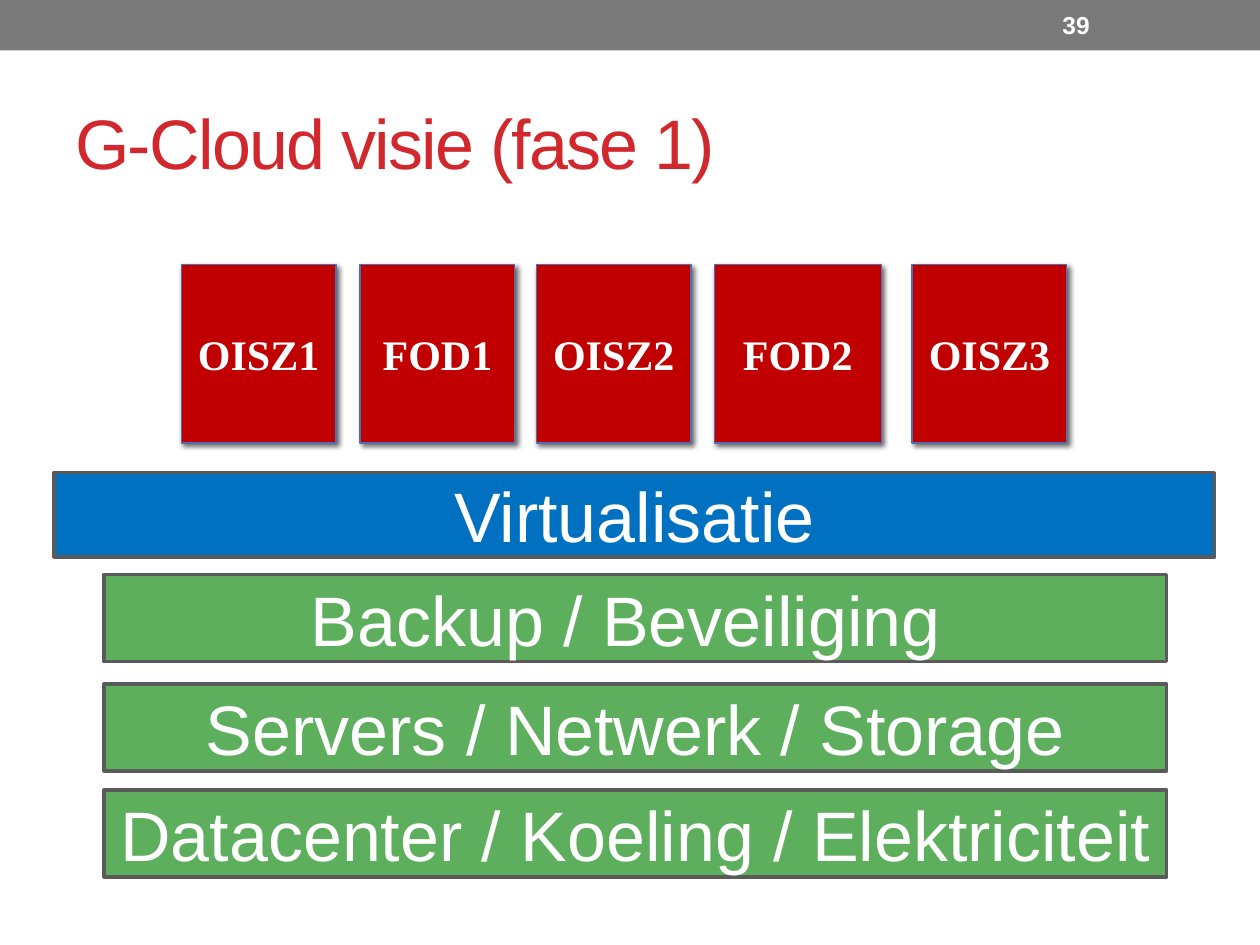
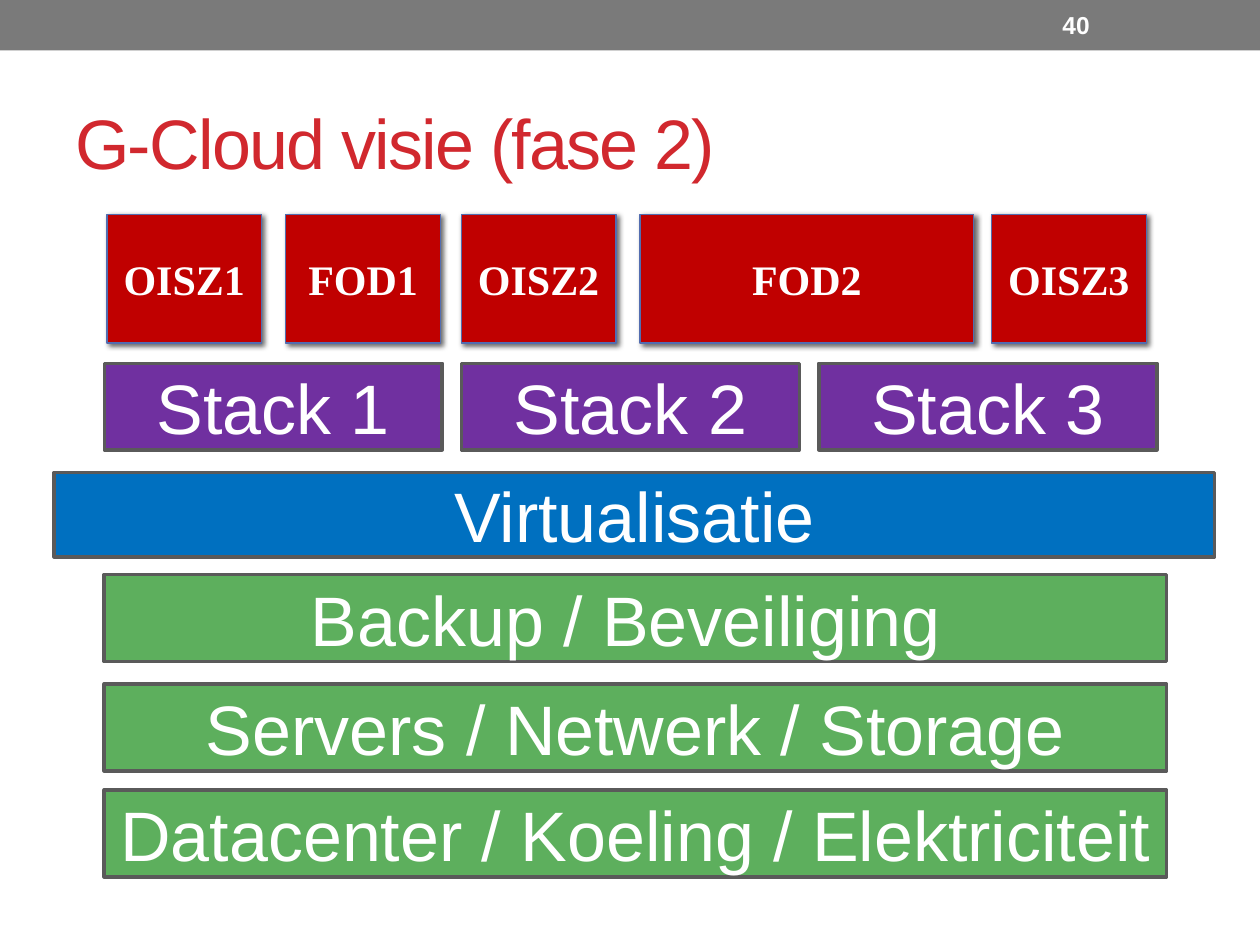
from lxml import etree
from pptx import Presentation
from pptx import util as u
from pptx.dml import color
from pptx.enum import shapes, text
from pptx.oxml import ns

GREY, RED_TITLE, WHITE = "7A7A7A", "D1282E", "FFFFFF"
GREEN, BLUE, PURPLE, EDGE = "5DAF5D", "0070C0", "7030A0", "5A5A5A"
RED, TENANT_EDGE = "C00000", "526DB0"
TENANT_NAMES = ("OISZ1", "FOD1", "OISZ2", "FOD2", "OISZ3")


def rgb(value):
    return color.RGBColor.from_string(value)


def write(box, words, size, tint=WHITE, font="Arial", bold=False, align=None):
    """Fill a box with one vertically centred line of text."""
    frame = box.text_frame
    frame.word_wrap = True
    frame.vertical_anchor = text.MSO_ANCHOR.MIDDLE
    para = frame.paragraphs[0]
    para.alignment = align
    span = para.add_run()
    span.text = words
    span.font.size = u.Pt(size)
    span.font.name = font
    span.font.bold = bold
    span.font.color.rgb = rgb(tint)
    return span


def add_text(page, bounds, words, size, **style):
    box = page.shapes.add_textbox(*map(u.Pt, bounds))
    return write(box, words, size, **style)


def add_block(page, bounds, fill, edge=None, weight=2.08):
    block = page.shapes.add_shape(shapes.MSO_SHAPE.RECTANGLE, *map(u.Pt, bounds))
    block.shadow.inherit = False
    block.fill.solid()
    block.fill.fore_color.rgb = rgb(fill)
    if edge:
        block.line.color.rgb = rgb(edge)
        block.line.width = u.Pt(weight)
    else:
        block.line.fill.background()
    return block


def add_layer(page, bounds, words, fill):
    layer = add_block(page, bounds, fill, EDGE)
    write(layer, words, 40, align=text.PP_ALIGN.CENTER)


def cast_shadow(block):
    """Drop a soft black shadow to the lower right."""
    effects = block.element.spPr.find(ns.qn("a:effectLst"))
    shadow = etree.SubElement(
        effects, ns.qn("a:outerShdw"), blurRad=str(u.Pt(3)), dist=str(u.Pt(2)),
        dir=str(45 * 60000), algn="tl", rotWithShape="0")
    tint = etree.SubElement(shadow, ns.qn("a:srgbClr"), val="000000")
    etree.SubElement(tint, ns.qn("a:alpha"), val="60000")


def draw_frame(page, width, title, number):
    # Top band with the page number
    add_block(page, (0, 0, width, 28.8), GREY)
    add_text(page, (width - 120, 1.4, 84, 26), number, 14, bold=True)
    # Title
    span = add_text(page, (36, 41.8, width - 72, 77.8), title, 40, tint=RED_TITLE)
    span.font._element.set("spc", "-100")


def draw_platform(page, bounds):
    """Virtualisation bar across the box, infrastructure layers below it."""
    left, top, width, height = bounds
    add_layer(page, (left, top, width, 48.2), "Virtualisatie", BLUE)
    inset, layer_height = 28.6, 49.7
    layers = (("Backup / Beveiliging ", 58.3),
              ("Servers / Netwerk / Storage", 120.8),
              ("Datacenter / Koeling / Elektriciteit", height - layer_height))
    for words, drop in layers:
        add_layer(page, (left + inset, top + drop, 607, layer_height), words, GREEN)


def draw_tenants(page, bounds, offsets, wide):
    """Tenant blocks of one width, except FOD2, which is as wide as given."""
    left, top, width, height = bounds
    for name, offset in zip(TENANT_NAMES, offsets):
        block_width = wide if name == "FOD2" else 88.4
        tenant = add_block(page, (left + offset, top, block_width, height),
                           RED, TENANT_EDGE, 0.75)
        cast_shadow(tenant)
        write(tenant, name, 24, font="Times New Roman", bold=True,
              align=text.PP_ALIGN.CENTER)


def draw_stacks(page, bounds, count=3, gap=11.1):
    left, top, width, height = bounds
    stack_width = (width - gap * (count - 1)) / count
    for index in range(count):
        x = left + index * (stack_width + gap)
        add_layer(page, (x, top, stack_width, height), f"Stack {index + 1}", PURPLE)


def add_phase(deck, phase, number):
    page = deck.slides.add_slide(deck.slide_layouts[6])
    draw_frame(page, deck.slide_width.pt, f"G-Cloud visie (fase {phase})", number)
    draw_platform(page, (31, 270, 663.1, 231.1))
    return page


def main():
    deck = Presentation()
    deck.slide_width, deck.slide_height = u.Pt(720), u.Pt(540)

    # Phase 1: tenants directly on the virtualisation layer
    page = add_phase(deck, 1, "39")
    draw_tenants(page, (103.6, 151.2, 506, 102), (0, 102.2, 202.9, 304.6, 417.6), 95.4)

    # Phase 2: shared stacks between tenants and virtualisation
    page = add_phase(deck, 2, "40")
    draw_tenants(page, (61.1, 122.4, 594, 73.7), (0, 102.2, 202.5, 304.6, 505.5), 190.8)
    draw_stacks(page, (59.6, 207.6, 601.4, 49.4))

    deck.save("out.pptx")


if __name__ == "__main__":
    main()
